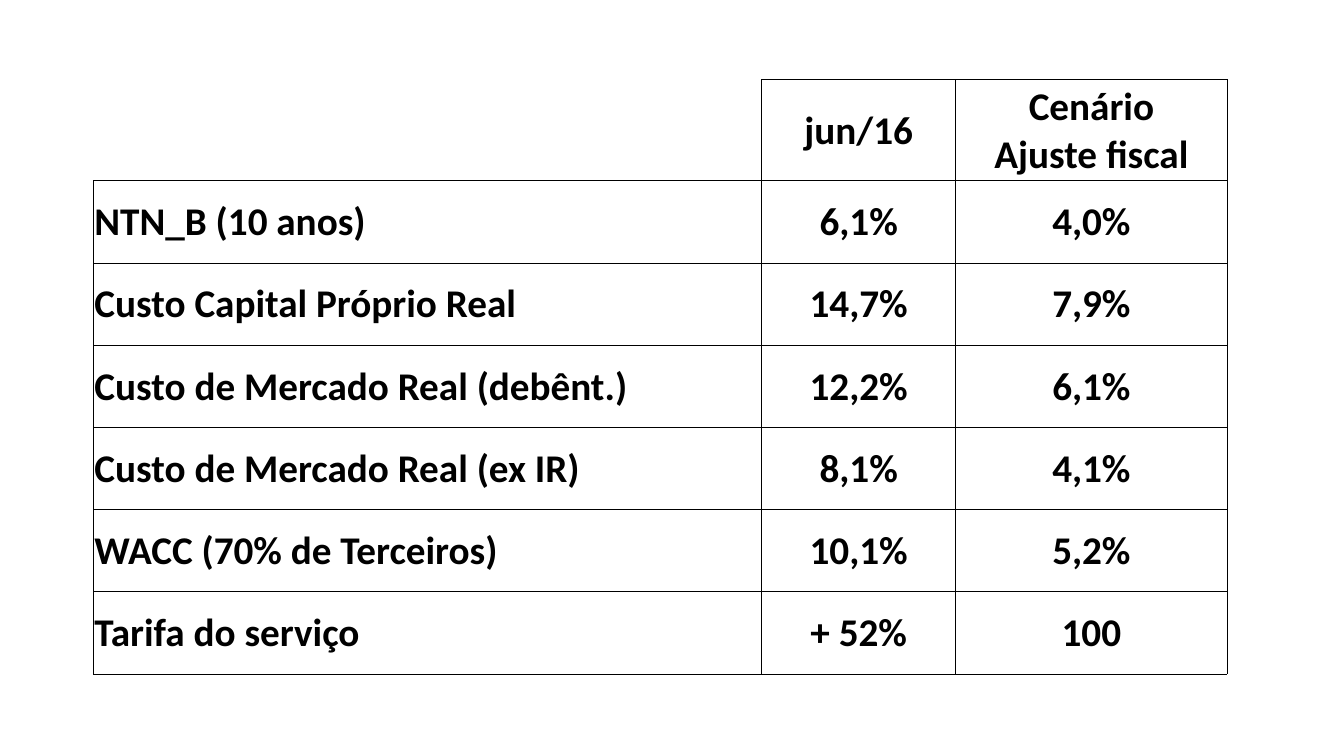
import dataclasses

import lxml.etree
import pptx
import pptx.dml.color
import pptx.enum.text
import pptx.oxml.ns
import pptx.util

Pt = pptx.util.Pt
ALIGN = pptx.enum.text.PP_ALIGN


@dataclasses.dataclass(frozen=True)
class Theme:
    font: str = "Calibri"
    ink: str = "000000"
    text_size: float = 28
    border_width: float = 0.5
    cell_margin: float = 0.75


THEME = Theme()
COLUMN_WIDTHS = (477.25, 138.75, 193.75)
HEADER_HEIGHT = 72
ROWS = (
    ("", "jun/16", "Cenário\nAjuste fiscal"),
    ("NTN_B (10 anos)", "6,1%", "4,0%"),
    ("Custo Capital Próprio Real", "14,7%", "7,9%"),
    ("Custo de Mercado Real (debênt.)", "12,2%", "6,1%"),
    ("Custo de Mercado Real (ex IR)", "8,1%", "4,1%"),
    ("WACC (70% de Terceiros)", "10,1%", "5,2%"),
    ("Tarifa do serviço", "+ 52%", "100"),
)


def write_text(text_frame, text, size=THEME.text_size, color=THEME.ink,
               bold=True, align=ALIGN.LEFT):
    text_frame.text = text
    for paragraph in text_frame.paragraphs:
        paragraph.alignment = align
        paragraph.font.size = Pt(size)
        for run in paragraph.runs:
            run.font.name = THEME.font
            run.font.size = Pt(size)
            run.font.bold = bold
            run.font.color.rgb = pptx.dml.color.RGBColor.from_string(color)


def draw_borders(cell, sides):
    qn = pptx.oxml.ns.qn
    properties = cell._tc.get_or_add_tcPr()
    for side in "LRTB":
        line = lxml.etree.SubElement(properties, qn(f"a:ln{side}"))
        if side in sides:
            line.set("w", str(Pt(THEME.border_width)))
            fill = lxml.etree.SubElement(line, qn("a:solidFill"))
            lxml.etree.SubElement(fill, qn("a:srgbClr"), val=THEME.ink)
        else:
            lxml.etree.SubElement(line, qn("a:noFill"))


def format_cell(cell, text, is_label):
    draw_borders(cell, "LRTB" if text else "RB")
    cell.fill.background()
    cell.vertical_anchor = pptx.enum.text.MSO_ANCHOR.MIDDLE
    cell.margin_left = cell.margin_right = cell.margin_top = Pt(THEME.cell_margin)
    cell.margin_bottom = Pt(0)
    write_text(cell.text_frame, text, align=ALIGN.LEFT if is_label else ALIGN.CENTER)


def add_cost_table(slide, left, top, width, height):
    table = slide.shapes.add_table(
        len(ROWS), len(COLUMN_WIDTHS), Pt(left), Pt(top), Pt(width), Pt(height)
    ).table
    table.first_row = table.horz_banding = False
    for column, column_width in zip(table.columns, COLUMN_WIDTHS):
        column.width = Pt(column_width)
    body_height = (height - HEADER_HEIGHT) / (len(ROWS) - 1)
    for row_index, texts in enumerate(ROWS):
        table.rows[row_index].height = Pt(body_height if row_index else HEADER_HEIGHT)
        for column_index, text in enumerate(texts):
            format_cell(table.cell(row_index, column_index), text, column_index == 0)


def main():
    presentation = pptx.Presentation()
    presentation.slide_width = Pt(960)
    presentation.slide_height = Pt(540)
    slide = presentation.slides.add_slide(presentation.slide_layouts[6])
    add_cost_table(slide, left=66.75, top=57, width=sum(COLUMN_WIDTHS), height=424.5)
    presentation.save("out.pptx")


if __name__ == "__main__":
    main()
